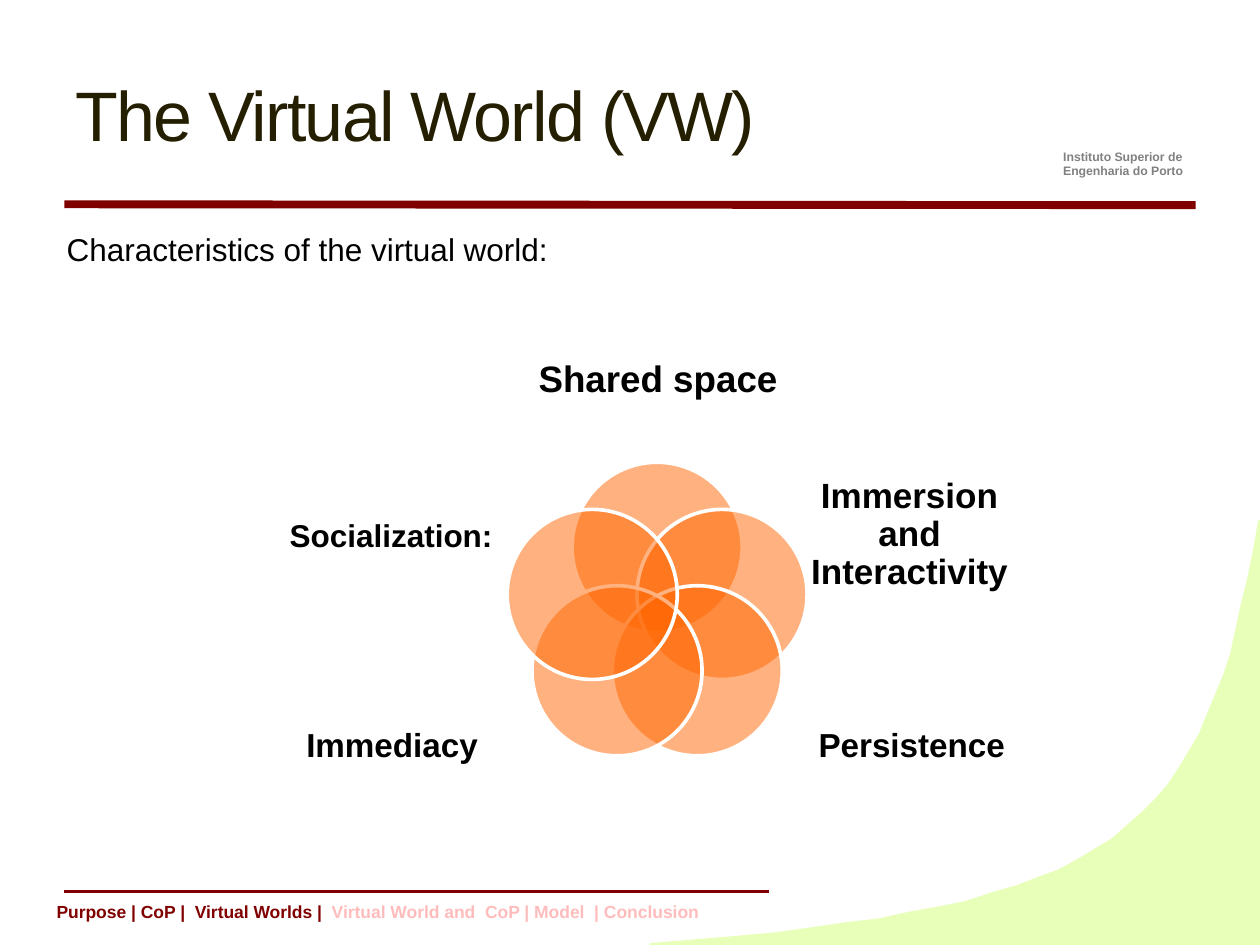
from math import cos, radians, sin

from lxml.etree import SubElement
from pptx import Presentation
from pptx.dml.color import RGBColor as Rgb
from pptx.enum.shapes import MSO_CONNECTOR as Link, MSO_SHAPE as Shape
from pptx.enum.text import MSO_ANCHOR as Anchor, MSO_AUTO_SIZE as Fit, PP_ALIGN as Align
from pptx.oxml.ns import qn
from pptx.util import Pt

COLORS = {
    "black": "000000", "title": "241F00", "grey": "808080", "red": "800000",
    "pink": "FFBCBC", "orange": "FF6600", "white": "FFFFFF", "lime": "E8FFB9",
}
CURVE = [
    (720, 298), (717, 315), (713.5, 330.5), (710.5, 345.5), (707, 360),
    (703.5, 373.5), (699.5, 386), (695, 398), (690.5, 409.5), (685.5, 420.5),
    (680, 430.5), (674.5, 440), (668, 449), (661, 457), (653, 465),
    (645, 472.5), (636, 479.5), (626.5, 486), (616, 492), (605, 497.5),
    (593.5, 502.5), (581, 507), (567, 511), (552.5, 515.5), (537, 519),
    (520, 522.5), (502.5, 525.5), (483.5, 528.5), (463.5, 531), (442, 533.5),
    (420, 536), (396.5, 538), (371.5, 540),
]
LABELS = [
    ("Shared space", 278.5, 185, 195, 65.5, 21),
    ("Immersion and Interactivity", 450, 270.5, 139.5, 70.5, 20),
    ("Persistence", 455.5, 391.5, 131, 70.5, 19),
    ("Immediacy", 139, 391.5, 170, 70.5, 19),
    ("Socialization:", 139, 272, 169, 70.5, 18),
]


class Deck:
    def __init__(self):
        self.prs = Presentation()
        self.prs.slide_width = Pt(720)
        self.prs.slide_height = Pt(540)
        self.slide = self.prs.slides.add_slide(self.prs.slide_layouts[6])
        self.shapes = self.slide.shapes
        self.face = "Arial"

    def color(self, name):
        return Rgb.from_string(COLORS[name])

    def paint(self, item, fill, edge, width):
        item.shadow.inherit = False
        item.fill.solid()
        item.fill.fore_color.rgb = self.color(fill)
        item.line.color.rgb = self.color(edge)
        item.line.width = Pt(width)

    def area(self, points, fill):
        pen = self.shapes.build_freeform(*points[0], scale=12700)
        pen.add_line_segments(points[1:], close=True)
        self.paint(pen.convert_to_shape(), fill, fill, 2.25)

    def rule(self, left, top, right, end, width):
        line = self.shapes.add_connector(Link.STRAIGHT, Pt(left), Pt(top), Pt(right), Pt(end))
        line.line.color.rgb = self.color("red")
        line.line.width = Pt(width)
        SubElement(line._element.spPr, qn("a:effectLst"))

    def disc(self, x, y, size):
        disc = self.shapes.add_shape(
            Shape.OVAL, Pt(x - size / 2), Pt(y - size / 2), Pt(size), Pt(size))
        self.paint(disc, "orange", "white", 2.08)
        tint = disc._element.spPr.find(qn("a:solidFill"))[0]
        SubElement(tint, qn("a:alpha"), val="50000")

    def text(self, runs, left, top, width, height, size, bold=False, wrap=True,
             anchor=Anchor.TOP, grow=False, track=None):
        box = self.shapes.add_textbox(Pt(left), Pt(top), Pt(width), Pt(height))
        frame = box.text_frame
        frame.word_wrap = wrap
        frame.vertical_anchor = anchor
        if grow:
            frame.auto_size = Fit.SHAPE_TO_FIT_TEXT
        para = frame.paragraphs[0]
        para.font.name = self.face
        para.font.size = Pt(size)
        para.font.bold = bold
        for words, color in runs:
            run = para.add_run()
            run.text = words
            run.font.color.rgb = self.color(color)
            if track:
                run.font._element.set("spc", str(track))
        return frame

    def label(self, words, left, top, width, height, size):
        frame = self.text([(words, "black")], left, top, width, height, size,
                          bold=True, anchor=Anchor.MIDDLE)
        frame.margin_left = frame.margin_right = 0
        frame.margin_top = frame.margin_bottom = 0
        frame.paragraphs[0].alignment = Align.CENTER
        frame.paragraphs[0].line_spacing = 0.9


def main():
    deck = Deck()
    deck.area(CURVE + [(720, 540)], "lime")
    deck.rule(36.75, 116.75, 683.25, 117.25, 4.5)
    deck.text([("Instituto Superior de Engenharia do Porto", "grey")],
              600.5, 81.5, 102, 24.5, 7, bold=True, grow=True)
    deck.rule(36.75, 509.5, 439.25, 509.5, 1.5)
    deck.text([("The Virtual World (VW)", "title")], 36, 26, 648, 78, 40,
              anchor=Anchor.MIDDLE, track=-100)
    deck.text([("Characteristics of the virtual world:", "black")],
              31, 128, 292.5, 29, 18, wrap=False, grow=True)
    for i, label in enumerate(LABELS):
        turn = radians(72 * i)
        deck.disc(375.5 + 39 * sin(turn), 351.75 - 39 * cos(turn), 97.2)
        deck.label(*label)
    deck.text([("Purpose | CoP |  Virtual Worlds |", "red"),
               ("  Virtual World and  CoP | Model  | Conclusion", "pink")],
              25.25, 511.25, 607, 31.5, 10, bold=True, grow=True)
    deck.prs.save("out.pptx")


if __name__ == "__main__":
    main()
